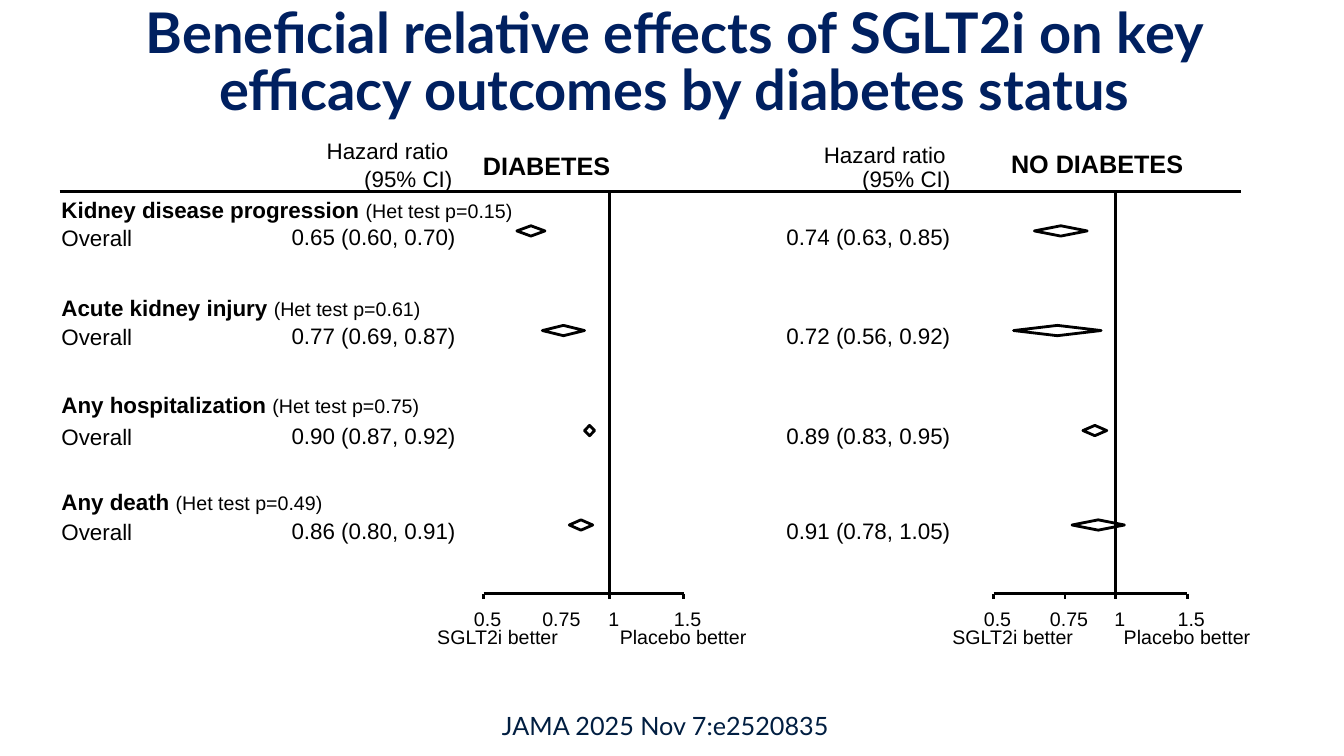
from math import log

from lxml.etree import SubElement
from pptx import Presentation
from pptx.dml.color import RGBColor
from pptx.enum.shapes import MSO_CONNECTOR as Link, MSO_SHAPE as Shape
from pptx.enum.text import MSO_ANCHOR as Anchor, PP_ALIGN as Align
from pptx.oxml.ns import qn
from pptx.util import Cm, Pt

COLORS = {"ink": "000000", "title": "002060", "cite": "011E41"}
FORMATS = {
    "title": {"name": "Lato", "size": Pt(40), "bold": True},
    "cite": {"name": "Lato", "size": Pt(18), "bold": False},
    "head": {"name": "Arial", "size": Pt(18), "bold": True},
    "strong": {"name": "Arial", "size": Pt(16), "bold": True},
    "body": {"name": "Arial", "size": Pt(16), "bold": False},
    "small": {"name": "Arial", "size": Pt(14), "bold": False},
}
RULE_Y, AXIS_Y = 4.83, 14.96
LABEL_X = 1.55
NAME_Y, NAME_STEP = 4.95, 2.45
ROW_MIDS = [5.82, 8.33, 10.85, 13.23]
OUTCOMES = [
    ("Kidney disease progression", "0.15"),
    ("Acute kidney injury", "0.61"),
    ("Any hospitalization", "0.75"),
    ("Any death", "0.49"),
]
SCALE = ["0.5", "0.75", "1", "1.5"]
PANELS = [
    {
        "head": "DIABETES", "head_at": (12.17, 3.78, 3.25),
        "ratio_at": (11.3, 3.45), "ci_right": 11.4, "value_right": 11.48,
        "half": 12.19, "one": 15.37, "ticks": [0.5, 1, 1.5],
        "better": (11.02, 15.62),
        "rows": [("0.65", "0.60", "0.70"), ("0.77", "0.69", "0.87"),
                 ("0.90", "0.87", "0.92"), ("0.86", "0.80", "0.91")],
    },
    {
        "head": "NO DIABETES", "head_at": (25.48, 3.73, 4.39),
        "ratio_at": (23.83, 3.56), "ci_right": 23.95, "value_right": 23.95,
        "half": 25.04, "one": 28.12, "ticks": [0.5, 0.75, 1, 1.5],
        "better": (24, 28.32),
        "rows": [("0.74", "0.63", "0.85"), ("0.72", "0.56", "0.92"),
                 ("0.89", "0.83", "0.95"), ("0.91", "0.78", "1.05")],
    },
]


def color(name):
    return RGBColor.from_string(COLORS[name])


def add_text(slide, x, y, w, h, runs, align=Align.LEFT, anchor=Anchor.TOP, ink="ink"):
    """Add a text box; runs is a list of (text, format name)."""
    box = slide.shapes.add_textbox(Cm(x), Cm(y), Cm(w), Cm(h))
    frame = box.text_frame
    settings = {"word_wrap": True, "vertical_anchor": anchor, "margin_left": 0,
                "margin_right": 0, "margin_top": 0, "margin_bottom": 0}
    for key, value in settings.items():
        setattr(frame, key, value)
    para = frame.paragraphs[0]
    para.alignment = align
    for text, style in runs:
        run = para.add_run()
        run.text = text
        for key, value in FORMATS[style].items():
            setattr(run.font, key, value)
        run.font.color.rgb = color(ink)
    return para


def add_right(slide, right, y, text):
    """Add body text that ends at the given right edge."""
    add_text(slide, right - 4.5, y, 4.5, 0.69, [(text, "body")], Align.RIGHT)


def add_line(slide, x1, y1, x2, y2):
    line = slide.shapes.add_connector(Link.STRAIGHT, Cm(x1), Cm(y1), Cm(x2), Cm(y2))
    line.line.color.rgb = color("ink")
    line.line.width = Pt(2)
    SubElement(line._element.spPr, qn("a:effectLst"))


def add_diamond(slide, left, right, mid):
    """Mark a confidence interval between two x positions."""
    mark = slide.shapes.add_shape(
        Shape.DIAMOND, Cm(left), Cm(mid - 0.13), Cm(right - left), Cm(0.26))
    mark.shadow.inherit = False
    mark.fill.background()
    mark.line.color.rgb = color("ink")
    mark.line.width = Pt(2)


def add_names(slide):
    for i, ((name, p), mid) in enumerate(zip(OUTCOMES, ROW_MIDS)):
        runs = [(name + " ", "strong"), (f"(Het test p={p})", "small")]
        add_text(slide, LABEL_X, NAME_Y + i * NAME_STEP, 11.58, 0.69, runs)
        add_text(slide, LABEL_X, mid - 0.18, 2.5, 0.69, [("Overall", "body")])


def add_panel(slide, panel):
    """Add one forest plot on a logarithmic axis."""
    half, one = panel["half"], panel["one"]

    def place(ratio):
        return one + (one - half) * log(ratio, 2)

    x, y, w = panel["head_at"]
    add_text(slide, x, y, w + 0.2, 0.76, [(panel["head"], "head")])
    add_right(slide, *panel["ratio_at"], "Hazard ratio")
    add_right(slide, panel["ci_right"], 4.17, "(95% CI)")

    add_line(slide, one, AXIS_Y, one, RULE_Y)
    add_line(slide, half, AXIS_Y, place(1.5), AXIS_Y)
    for tick in panel["ticks"]:
        add_line(slide, place(tick), AXIS_Y, place(tick), AXIS_Y + 0.13)
    for text in SCALE:
        left = place(float(text)) + 0.1 - 0.6
        add_text(slide, left, 15.29, 1.2, 0.61, [(text, "small")], Align.CENTER)
    for left, text in zip(panel["better"], ("SGLT2i better", "Placebo better")):
        add_text(slide, left, 15.75, 3.5, 0.61, [(text, "small")])

    for (ratio, low, high), mid in zip(panel["rows"], ROW_MIDS):
        add_right(slide, panel["value_right"], mid - 0.2, f"{ratio} ({low}, {high})")
        add_diamond(slide, place(float(low)), place(float(high)), mid)


def main():
    deck = Presentation()
    deck.slide_width, deck.slide_height = Cm(33.87), Cm(19.05)
    slide = deck.slides.add_slide(deck.slide_layouts[6])
    title = "Beneficial relative effects of SGLT2i on key efficacy outcomes by diabetes status"
    para = add_text(slide, 1.32, 0.1, 31.34, 2.97, [(title, "title")],
                    Align.CENTER, Anchor.BOTTOM, "title")
    para.line_spacing = 0.85
    add_line(slide, 1.5, RULE_Y, 31.27, RULE_Y)
    add_names(slide)
    for panel in PANELS:
        add_panel(slide, panel)
    add_text(slide, 12.65, 17.85, 8.9, 0.86, [("JAMA 2025 Nov 7:e2520835", "cite")],
             anchor=Anchor.MIDDLE, ink="cite")
    deck.save("out.pptx")


if __name__ == "__main__":
    main()
